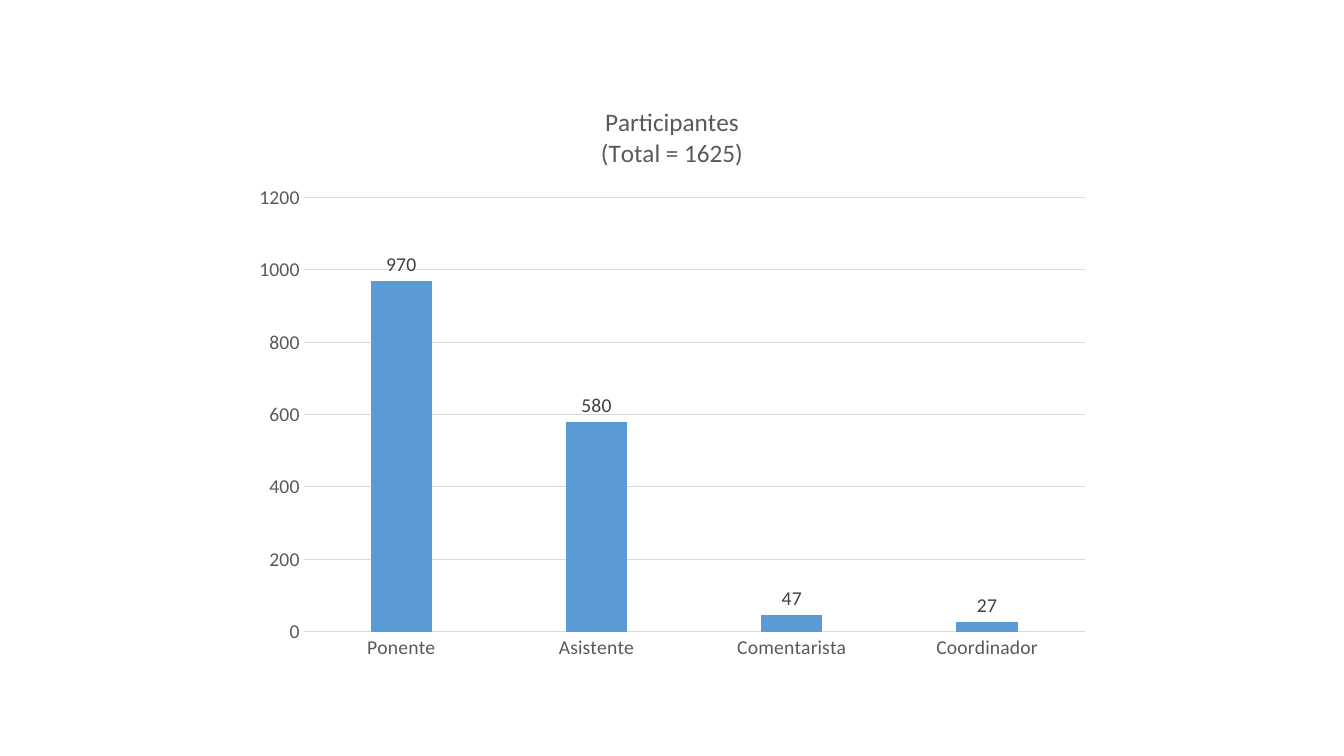
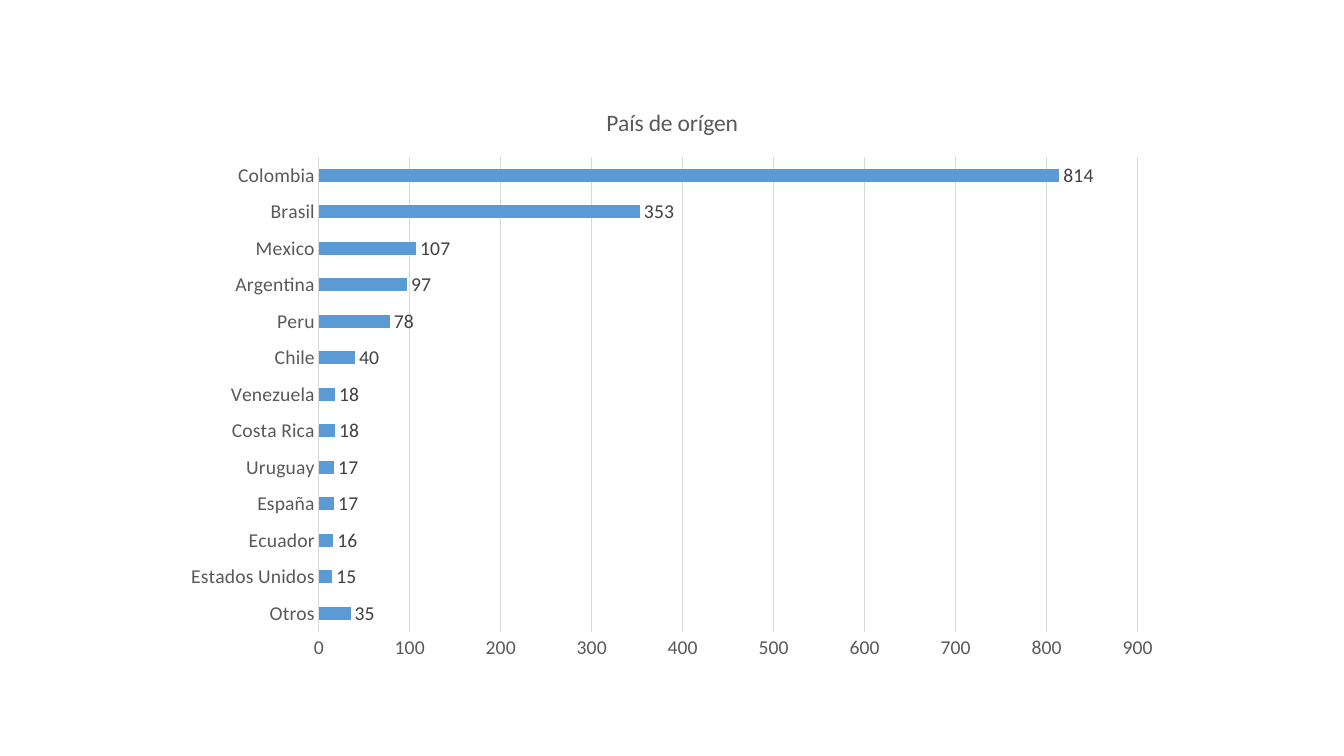
"""Build two slides with charts of the event's participants."""
from pptx import Presentation
from pptx.chart.data import CategoryChartData
from pptx.dml.color import RGBColor
from pptx.enum.chart import XL_CHART_TYPE as ChartType
from pptx.enum.chart import XL_LABEL_POSITION as LabelPosition
from pptx.enum.chart import XL_TICK_MARK as TickMark
from pptx.util import Cm, Pt

SLIDE_WIDTH, SLIDE_HEIGHT = Cm(33.87), Cm(19.05)
CHART_TOP, CHART_HEIGHT = Cm(2.16), Cm(14.76)
FONT = "Calibri"
BAR_COLOR = "5B9BD5"
TEXT_COLOR = "595959"
LABEL_COLOR = "404040"
LINE_COLOR = "D9D9D9"

ROLES = {"Ponente": 970, "Asistente": 580, "Comentarista": 47, "Coordinador": 27}
COUNTRIES = {
    "Otros": 35,
    "Estados Unidos": 15,
    "Ecuador": 16,
    "España": 17,
    "Uruguay": 17,
    "Costa Rica": 18,
    "Venezuela": 18,
    "Chile": 40,
    "Peru": 78,
    "Argentina": 97,
    "Mexico": 107,
    "Brasil": 353,
    "Colombia": 814,
}


def color(hex_string):
    """Return the colour for a hex string."""
    return RGBColor.from_string(hex_string)


def style_font(font, hex_string, size=14):
    """Apply the shared typeface with a colour and a size."""
    font.name = FONT
    font.size = Pt(size)
    font.bold = False
    font.color.rgb = color(hex_string)


def style_line(line):
    """Make a line thin and grey."""
    line.width = Pt(0.75)
    line.color.rgb = color(LINE_COLOR)


def style_title(chart, text, size):
    """Set the chart title, one paragraph for each line."""
    frame = chart.chart_title.text_frame
    frame.text = text
    for paragraph in frame.paragraphs:
        style_font(paragraph.font, TEXT_COLOR, size)


def style_axes(chart, maximum, step):
    """Style both axes and scale the value axis."""
    category_axis, value_axis = chart.category_axis, chart.value_axis
    for axis in (category_axis, value_axis):
        axis.major_tick_mark = axis.minor_tick_mark = TickMark.NONE
        style_font(axis.tick_labels.font, TEXT_COLOR)
    style_line(category_axis.format.line)
    value_axis.format.line.fill.background()
    value_axis.minimum_scale = 0
    value_axis.maximum_scale = maximum
    value_axis.major_unit = step
    value_axis.has_major_gridlines = True
    style_line(value_axis.major_gridlines.format.line)


def style_bars(plot, gap, overlap):
    """Colour the bars and show their values at the outer ends."""
    plot.gap_width = gap
    plot.overlap = overlap
    plot.vary_by_categories = False
    series = plot.series[0]
    series.invert_if_negative = False
    series.format.fill.solid()
    series.format.fill.fore_color.rgb = color(BAR_COLOR)
    labels = series.data_labels
    labels.show_value = True
    labels.position = LabelPosition.OUTSIDE_END
    style_font(labels.font, LABEL_COLOR)


def add_chart_slide(presentation, chart_type, width, title, title_size,
                    values, maximum, step, gap, overlap=0):
    """Add a blank slide with one horizontally centred chart."""
    slide = presentation.slides.add_slide(presentation.slide_layouts[6])
    data = CategoryChartData()
    data.categories = list(values)
    data.add_series("Series 1", list(values.values()))
    left = (SLIDE_WIDTH - width) // 2
    chart = slide.shapes.add_chart(
        chart_type, left, CHART_TOP, width, CHART_HEIGHT, data).chart
    chart.has_legend = False
    style_font(chart.font, "000000")
    style_title(chart, title, title_size)
    style_axes(chart, maximum, step)
    style_bars(chart.plots[0], gap, overlap)


def main():
    """Build and save the presentation."""
    presentation = Presentation()
    presentation.slide_width = SLIDE_WIDTH
    presentation.slide_height = SLIDE_HEIGHT
    add_chart_slide(
        presentation, ChartType.COLUMN_CLUSTERED, Cm(21.67),
        "Participantes\n(Total = 1625)", 18, ROLES,
        maximum=1200, step=200, gap=219, overlap=-27)
    add_chart_slide(
        presentation, ChartType.BAR_CLUSTERED, Cm(25.25),
        "País de orígen", 16.8, COUNTRIES,
        maximum=900, step=100, gap=182)
    presentation.save("out.pptx")


if __name__ == "__main__":
    main()
